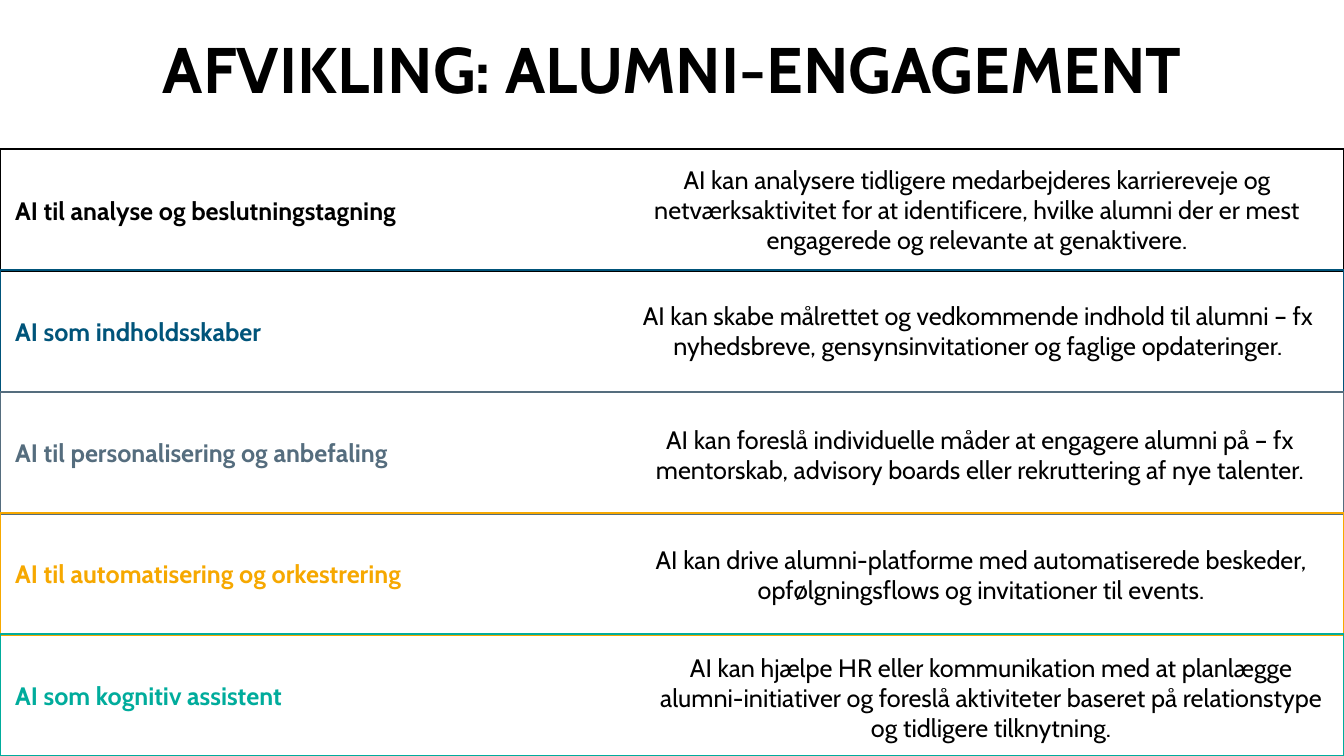
"""Build the slide on how AI supports alumni engagement."""
from pptx import Presentation
from pptx.dml.color import RGBColor
from pptx.enum.shapes import MSO_SHAPE as SHAPE
from pptx.enum.text import MSO_ANCHOR as ANCHOR, MSO_AUTO_SIZE as FIT, PP_ALIGN as ALIGN
from pptx.util import Inches, Pt


def rgb(value):
    """Turn a hex string into a colour."""
    return RGBColor.from_string(value)


def write(holder, text, size, color, bold, align):
    """Put one vertically centred paragraph into a shape."""
    frame = holder.text_frame
    frame.word_wrap = True
    frame.auto_size = FIT.NONE
    frame.vertical_anchor = ANCHOR.MIDDLE
    frame.text = text
    paragraph = frame.paragraphs[0]
    paragraph.alignment = align
    paragraph.font.name = "Cabin"
    paragraph.font.size = Pt(size)
    paragraph.font.bold = bold
    paragraph.font.color.rgb = rgb(color)


WIDTH = 13.33
FIRST_TOP = 1.48
ROW_PITCH = 1.2025
ROW_HEIGHT = 1.21

USES = [
    ("AI til analyse og beslutningstagning", "000000", 6.19, 1.48,
     "AI kan analysere tidligere medarbejderes karriereveje og netværksaktivitet for at "
     "identificere, hvilke alumni der er mest engagerede og relevante at genaktivere."),
    ("AI som indholdsskaber", "00547A", 6.2, 2.68,
     "AI kan skabe målrettet og vedkommende indhold til alumni – fx nyhedsbreve, "
     "gensynsinvitationer og faglige opdateringer."),
    ("AI til personalisering og anbefaling", "556D7E", 6.22, 3.91,
     "AI kan foreslå individuelle måder at engagere alumni på – fx mentorskab, "
     "advisory boards eller rekruttering af nye talenter."),
    ("AI til automatisering og orkestrering", "F6A800", 6.23, 5.1,
     "AI kan drive alumni-platforme med automatiserede beskeder, opfølgningsflows "
     "og invitationer til events."),
    ("AI som kognitiv assistent", "00AC9C", 6.33, 6.32,
     "AI kan hjælpe HR eller kommunikation med at planlægge alumni-initiativer og "
     "foreslå aktiviteter baseret på relationstype og tidligere tilknytning."),
]

deck = Presentation()
deck.slide_width = Inches(WIDTH)
deck.slide_height = Inches(7.5)
slide = deck.slides.add_slide(deck.slide_layouts[5])

headline = slide.shapes.title
headline.left, headline.top = Inches(0), Inches(0)
headline.width, headline.height = Inches(WIDTH), Inches(1.34)
write(headline, "AFVIKLING: ALUMNI-ENGAGEMENT", 46, "000000", True, ALIGN.CENTER)

for row, (use, color, *_) in enumerate(USES):
    band = slide.shapes.add_shape(SHAPE.RECTANGLE, Inches(0), Inches(FIRST_TOP + row * ROW_PITCH),
                                  Inches(WIDTH), Inches(ROW_HEIGHT))
    band.shadow.inherit = False
    band.fill.background()
    band.line.color.rgb = rgb(color)
    band.line.width = Pt(1.5)
    band.text_frame.margin_left = Inches(0.15)
    write(band, use, 18, color, True, ALIGN.LEFT)

for _, _, left, top, description in USES:
    detail = slide.shapes.add_textbox(Inches(left), Inches(top), Inches(7), Inches(1.2))
    write(detail, description, 18, "000000", False, ALIGN.CENTER)

deck.save("out.pptx")
